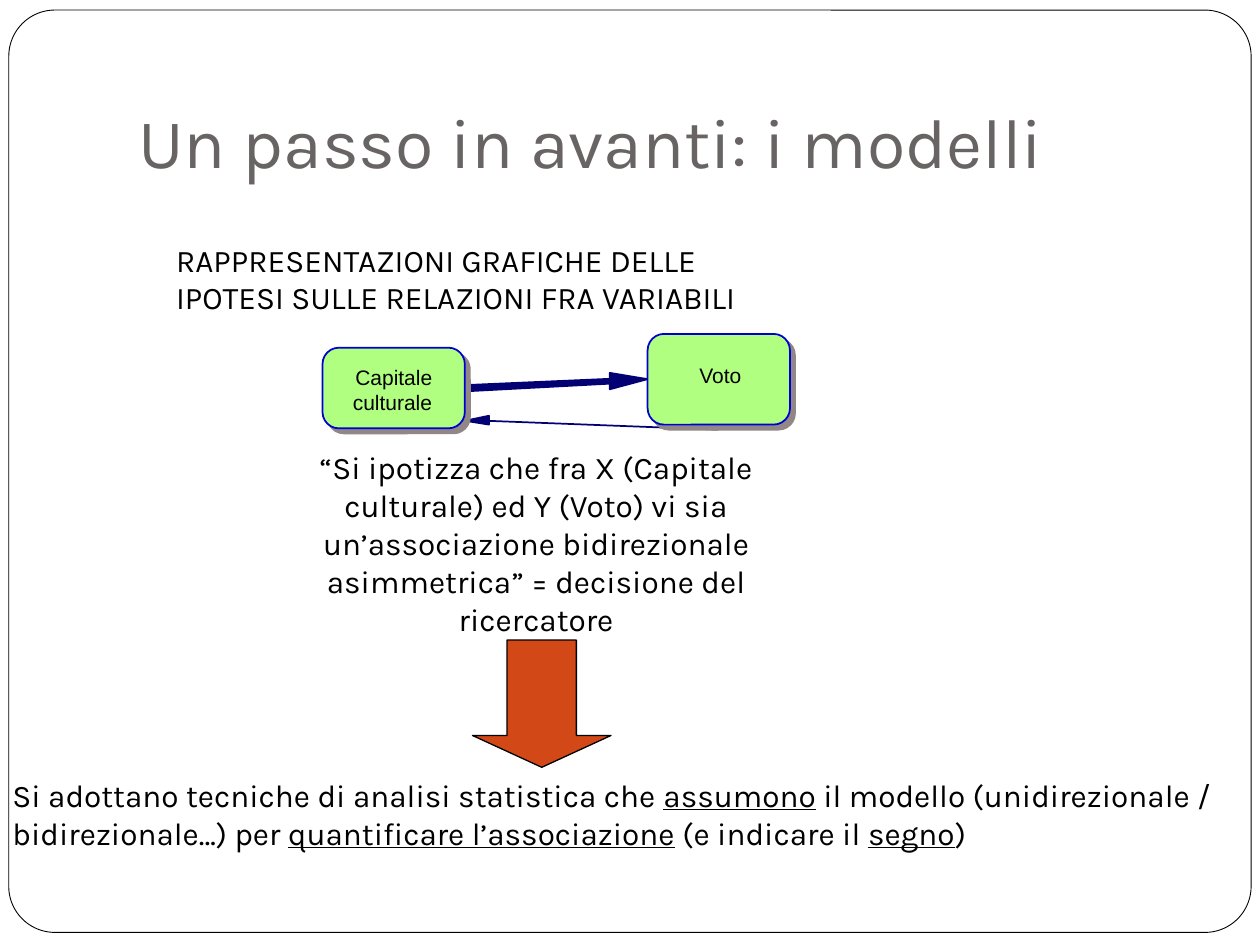
import pptx
import pptx.dml.color
import pptx.enum.shapes
import pptx.enum.text
import pptx.oxml.ns
import pptx.util
from lxml import etree
from pptx.util import Inches

SHAPES = pptx.enum.shapes.MSO_SHAPE
ALIGN = pptx.enum.text.PP_ALIGN
ANCHOR = pptx.enum.text.MSO_ANCHOR
NAVY = "020073"
SHADOW = "918787"

presentation = pptx.Presentation()
presentation.slide_width = Inches(10)
presentation.slide_height = Inches(7.5)
slide = presentation.slides.add_slide(presentation.slide_layouts[6])
color = pptx.dml.color.RGBColor.from_string


def paint(shape, fill, line, width=1):
    shape.shadow.inherit = False
    shape.fill.solid()
    shape.fill.fore_color.rgb = color(fill)
    shape.line.color.rgb = color(line)
    shape.line.width = pptx.util.Pt(width)


def add_text(box, runs, size, font="Karla", text_color="000000",
             align=ALIGN.LEFT, margins=(0.1, 0.05, 0.1, 0.05), anchor=ANCHOR.TOP):
    """Add a text box; runs are (text, underlined) pairs."""
    frame = slide.shapes.add_textbox(*map(Inches, box)).text_frame
    frame.word_wrap = True
    frame.vertical_anchor = anchor
    (frame.margin_left, frame.margin_top,
     frame.margin_right, frame.margin_bottom) = map(Inches, margins)
    paragraph = frame.paragraphs[0]
    paragraph.alignment = align
    paragraph.font.size = pptx.util.Pt(size)
    paragraph.font.name = font
    paragraph.font.color.rgb = color(text_color)
    for text, underlined in runs:
        run = paragraph.add_run()
        run.text = text
        if underlined:
            run.font.underline = True


# Slide frame
frame_shape = slide.shapes.add_shape(
    SHAPES.ROUNDED_RECTANGLE, Inches(0.07), Inches(0.08), Inches(9.86), Inches(7.32))
frame_shape.adjustments[0] = 0.05
paint(frame_shape, "FFFFFF", "000000", 0.5)

# Title and introduction
add_text((1, 0.3, 8.5, 1.25), [("Un passo in avanti: i modelli", False)], 40,
         text_color="696464", margins=(0.1, 0.05, 0.1, 0.1), anchor=ANCHOR.BOTTOM)
add_text((1.3, 1.86, 5, 0.71),
         [("RAPPRESENTAZIONI GRAFICHE DELLE IPOTESI SULLE RELAZIONI FRA VARIABILI", False)], 18)

# Thin return line
return_line = slide.shapes.add_connector(
    pptx.enum.shapes.MSO_CONNECTOR.STRAIGHT,
    Inches(5.7), Inches(3.41), Inches(3.87), Inches(3.34))
return_line.line.color.rgb = color(NAVY)
return_line.line.width = pptx.util.Pt(1)
etree.SubElement(return_line._element.spPr, pptx.oxml.ns.qn("a:effectLst"))

# Thick arrow shaft, its head, and the head of the return line
outlines = [
    ([(3.69, 3.05), (4.83, 3), (4.88, 3), (4.88, 3.05), (3.75, 3.11), (3.69, 3.11)], False),
    ([(5.14, 3.01), (4.84, 2.96), (4.84, 3.09)], True),
    ([(3.69, 3.34), (3.88, 3.3), (3.88, 3.37)], True),
]
for points, outlined in outlines:
    builder = slide.shapes.build_freeform(
        Inches(points[0][0]), Inches(points[0][1]), scale=1.0)
    builder.add_line_segments([(Inches(x), Inches(y)) for x, y in points[1:]], close=True)
    arrow_part = builder.convert_to_shape()
    paint(arrow_part, NAVY, NAVY)
    if not outlined:
        arrow_part.line.fill.background()

# Variable boxes, each over an offset shadow
variables = [
    (2.56, 2.76, 0.64, [("Capitale", 2.82, 2.89), ("culturale", 2.8, 3.09)]),
    (5.14, 2.65, 0.72, [("Voto", 5.55, 2.88)]),
]
for left, top, height, labels in variables:
    for offset, fill, line in ((0.04, SHADOW, SHADOW), (0, "B1FF80", "0000D4")):
        variable_box = slide.shapes.add_shape(
            SHAPES.ROUNDED_RECTANGLE, Inches(left + offset), Inches(top + offset),
            Inches(1.13), Inches(height))
        variable_box.adjustments[0] = 0.13 / height
        paint(variable_box, fill, line)
    for label, label_left, label_top in labels:
        add_text((label_left, label_top, 0.72, 0.23), [(label, False)], 12,
                 font="Arial", margins=(0, 0, 0, 0))

# Hypothesis
add_text((2.09, 3.51, 4.33, 1.62),
         [("“Si ipotizza che fra X (Capitale culturale) ed Y (Voto) vi sia "
           "un’associazione bidirezionale asimmetrica” = decisione del ricercatore", False)],
         18, align=ALIGN.CENTER)

# Down arrow to the conclusion
down_arrow = slide.shapes.add_shape(
    SHAPES.DOWN_ARROW, Inches(3.75), Inches(5.08), Inches(1.1), Inches(1.01))
down_arrow.adjustments[0] = 0.5
down_arrow.adjustments[1] = 0.25
paint(down_arrow, "D34817", "000000", 0.75)

add_text((0, 6.11, 10.31, 0.71), [
    ("Si adottano tecniche di analisi statistica che ", False),
    ("assumono", True),
    (" il modello (unidirezionale / bidirezionale…) per ", False),
    ("quantificare l’associazione", True),
    (" (e indicare il ", False),
    ("segno", True),
    (")", False),
], 18)

presentation.save("out.pptx")
